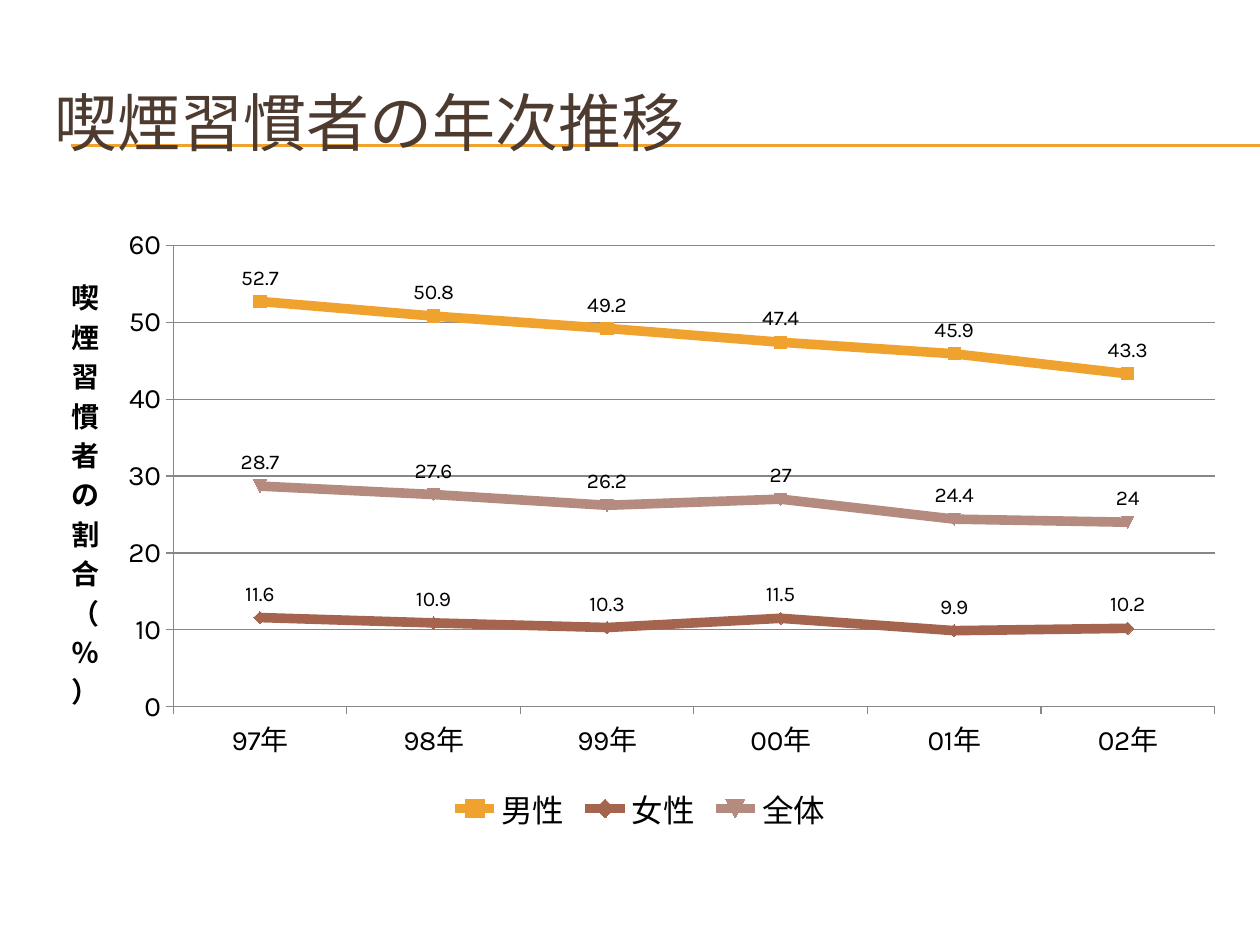
"""Build a slide with a line chart of smoking rates by year."""
import pptx
import pptx.chart.data
import pptx.dml.color
import pptx.enum.chart
import pptx.enum.shapes
import pptx.enum.text
import pptx.oxml
import pptx.util
from pptx.util import Inches, Pt

RGB = pptx.dml.color.RGBColor.from_string
THEME = {
    "font": "Karla",
    "title": RGB("4E3B30"),
    "text": RGB("000000"),
    "grid": RGB("878787"),
    "rule": RGB("F0A22E"),
    "series": [RGB("F0A22E"), RGB("A5644E"), RGB("B58B80")],
    "title_size": Pt(36),
    "legend_size": Pt(18),
    "axis_size": Pt(16),
    "label_size": Pt(12),
}
YEARS = ["97年", "98年", "99年", "00年", "01年", "02年"]
RATES = {
    "男性": [52.7, 50.8, 49.2, 47.4, 45.9, 43.3],
    "女性": [11.6, 10.9, 10.3, 11.5, 9.9, 10.2],
    "全体": [28.7, 27.6, 26.2, 27, 24.4, 24],
}


def set_font(font, size, color):
    font.name = THEME["font"]
    font.size = size
    font.color.rgb = color


def set_line(line, color, width):
    line.color.rgb = color
    line.width = width


prs = pptx.Presentation()
prs.slide_width, prs.slide_height = Inches(10), Inches(7.5)
s = prs.slides.add_slide(prs.slide_layouts[5])

for y in (1.15, 1.16):
    rule = s.shapes.add_connector(
        pptx.enum.shapes.MSO_CONNECTOR.STRAIGHT, Inches(0.56), Inches(y), Inches(10), Inches(y))
    set_line(rule.line, THEME["rule"], Pt(0.75))
    rule.element.spPr.append(pptx.oxml.parse_xml(
        '<a:effectLst xmlns:a="http://schemas.openxmlformats.org/drawingml/2006/main"/>'))

title = s.shapes.title
title.left, title.top, title.width, title.height = Inches(0.33), Inches(0.5), Inches(9.5), Inches(0.92)
title.element.getparent().append(title.element)
tf = title.text_frame
tf.text = "喫煙習慣者の年次推移"
tf.vertical_anchor = pptx.enum.text.MSO_ANCHOR.MIDDLE
p = tf.paragraphs[0]
p.alignment = pptx.enum.text.PP_ALIGN.LEFT
set_font(p.runs[0].font, THEME["title_size"], THEME["title"])

data = pptx.chart.data.CategoryChartData()
data.categories = YEARS
for name, values in RATES.items():
    data.add_series(name, values)
chart = s.shapes.add_chart(
    pptx.enum.chart.XL_CHART_TYPE.LINE_MARKERS,
    Inches(0.33), Inches(1.7), Inches(9.5), Inches(4.95), data).chart
set_font(chart.font, THEME["legend_size"], THEME["text"])
chart.has_title = False
chart.has_legend = True
chart.legend.position = pptx.enum.chart.XL_LEGEND_POSITION.BOTTOM
chart.legend.include_in_layout = False
set_font(chart.legend.font, THEME["legend_size"], THEME["text"])

for axis in (chart.category_axis, chart.value_axis):
    set_font(axis.tick_labels.font, THEME["axis_size"], THEME["text"])
    set_line(axis.format.line, THEME["grid"], Pt(0.75))
    axis.major_tick_mark = pptx.enum.chart.XL_TICK_MARK.OUTSIDE

rates = chart.value_axis
rates.minimum_scale, rates.maximum_scale, rates.major_unit = 0, 60, 10
rates.has_major_gridlines = True
set_line(rates.major_gridlines.format.line, THEME["grid"], Pt(0.75))
rates.tick_labels.number_format = "General"
rates.tick_labels.number_format_is_linked = False
tf = rates.axis_title.text_frame
tf.text = "喫煙習慣者の割合（％）"
r = tf.paragraphs[0].runs[0]
set_font(r.font, THEME["axis_size"], THEME["text"])
r.font.bold = True
body = rates.axis_title.element.xpath(".//a:bodyPr")[0]
body.set("rot", "0")
body.set("vert", "wordArtVertRtl")

plot = chart.plots[0]
plot.vary_by_categories = False
for series, color in zip(plot.series, THEME["series"]):
    series.smooth = False
    set_line(series.format.line, color, Pt(5.5))
    series.marker.size = 7
    series.marker.format.fill.solid()
    series.marker.format.fill.fore_color.rgb = color
    series.marker.format.line.color.rgb = color
    labels = series.data_labels
    labels.show_value = True
    labels.position = pptx.enum.chart.XL_LABEL_POSITION.ABOVE
    set_font(labels.font, THEME["label_size"], THEME["text"])

area = chart.element.xpath(".//c:plotArea")[0]
for old in area.xpath("./c:layout"):
    area.remove(old)
area.insert(0, pptx.oxml.parse_xml(
    '<c:layout xmlns:c="http://schemas.openxmlformats.org/drawingml/2006/chart"><c:manualLayout>'
    '<c:layoutTarget val="inner"/><c:xMode val="edge"/><c:yMode val="edge"/>'
    '<c:x val="0.11"/><c:y val="0.05"/><c:w val="0.87"/><c:h val="0.74"/>'
    '</c:manualLayout></c:layout>'))

prs.save("out.pptx")
